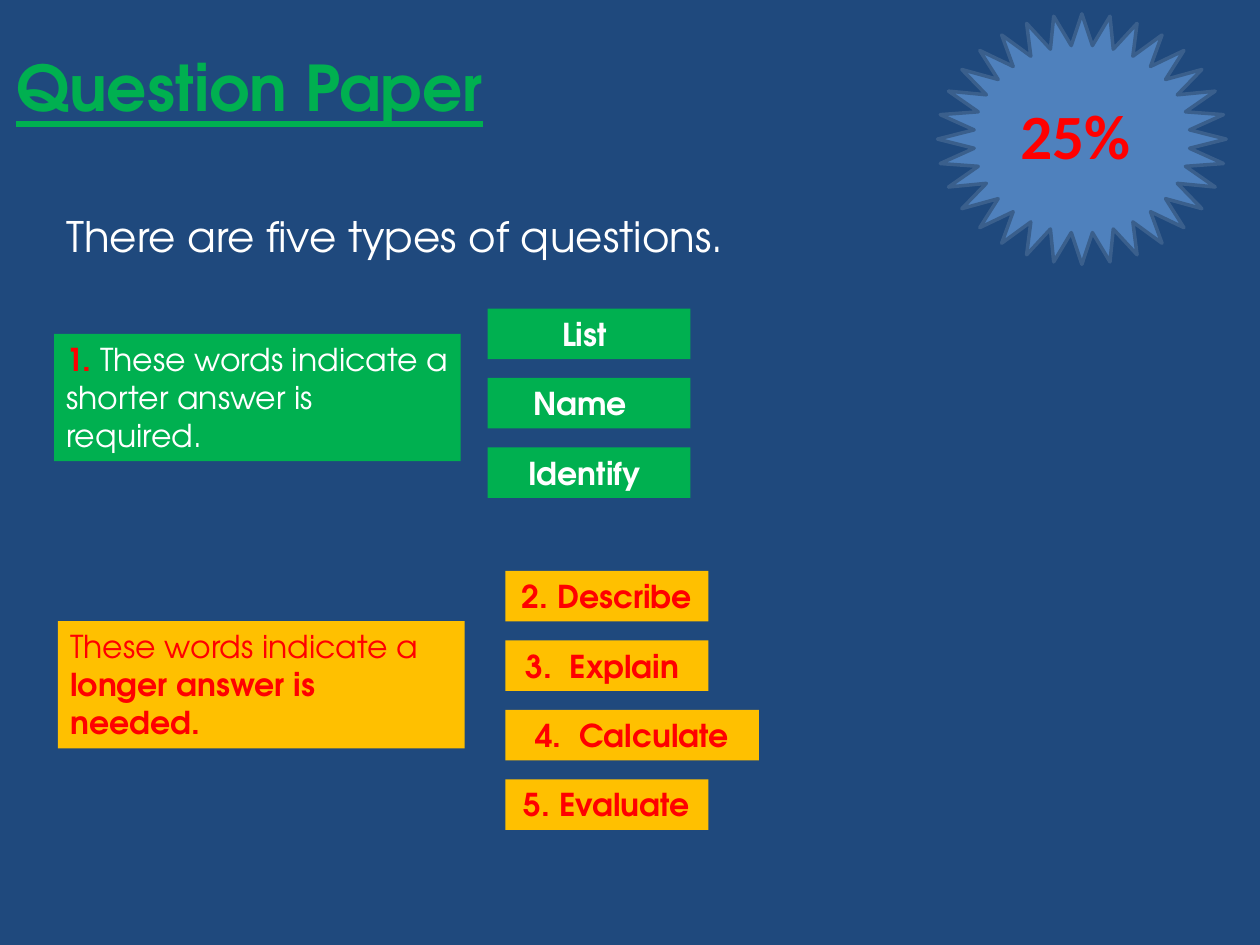
from pptx import Presentation
from pptx.dml.color import RGBColor as Rgb
from pptx.enum.shapes import MSO_SHAPE as Preset
from pptx.enum.text import MSO_AUTO_SIZE as AutoSize, PP_ALIGN as Align
from pptx.util import Cm, Pt

THEME = {
    "navy": "1F497D", "green": "00B050", "amber": "FFC000", "red": "FF0000",
    "white": "FFFFFF", "blue": "4F81BD", "outline": "3A5F8C",
    "font": "TeX Gyre Adventor", "badge_font": "Calibri",
    "title": 36, "lead": 24, "body": 18,
}

TITLE = "Question Paper"
SHARE = "25%"
LEAD = "There are five types of questions."

# Runs are (text, colour, bold); words are (text, width, inset that nudges it left).
GROUPS = [
    {
        "fill": "green", "ink": "white",
        "note": [("1. ", "red", True),
                 ("These words indicate a shorter answer is required.", "white", False)],
        "note_at": (1.09, 6.73), "words_at": (9.83, 6.22),
        "words": [("List", 4.09, 0.18), ("Name", 4.09, 0.36), ("Identify", 4.09, 0.18)],
    },
    {
        "fill": "amber", "ink": "red",
        "note": [("These words indicate a ", "red", False),
                 ("longer answer is needed.", "red", True)],
        "note_at": (1.17, 12.52), "words_at": (10.19, 11.51),
        "words": [("2. Describe", 4.09, 0), ("3.  Explain", 4.09, 0.18),
                  ("4.  Calculate", 5.11, 0), ("5. Evaluate", 4.09, 0)],
    },
]
NOTE_SIZE = (8.2, 2.57)
WORD_HEIGHT, WORD_STEP = 1.02, 1.4
INSET = 0.25


def colour(key):
    return Rgb.from_string(THEME[key])


def apply(target, values):
    for key, value in values.items():
        setattr(target, key, value)


def write(slide, box, runs, size="body", fill=None, align=Align.LEFT,
          nudge=0, font="font", underline=False):
    label = slide.shapes.add_textbox(*map(Cm, box))
    if fill:
        label.fill.solid()
        label.fill.fore_color.rgb = colour(fill)
    apply(label.text_frame, {
        "word_wrap": True,
        "auto_size": AutoSize.SHAPE_TO_FIT_TEXT,
        "margin_right": Cm(INSET + nudge),
    })
    paragraph = label.text_frame.paragraphs[0]
    paragraph.alignment = align
    for text, ink, bold in runs:
        run = paragraph.add_run()
        run.text = text
        apply(run.font, {"name": THEME[font], "size": Pt(THEME[size]),
                         "bold": bold, "underline": underline})
        run.font.color.rgb = colour(ink)


def draw_badge(slide):
    badge = slide.shapes.add_shape(Preset.STAR_32_POINT, Cm(18.9), Cm(0.28), Cm(5.82), Cm(5.05))
    badge.shadow.inherit = False
    badge.fill.solid()
    badge.fill.fore_color.rgb = colour("blue")
    badge.line.color.rgb = colour("outline")
    badge.line.width = Pt(2)
    write(slide, (20.32, 1.83, 3, 1.8), [(SHARE, "red", True)], "title", font="badge_font")


def draw_group(slide, group):
    write(slide, group["note_at"] + NOTE_SIZE, group["note"], fill=group["fill"])
    left, top = group["words_at"]
    for row, (word, width, nudge) in enumerate(group["words"]):
        write(slide, (left, top + row * WORD_STEP, width, WORD_HEIGHT),
              [(word, group["ink"], True)], fill=group["fill"],
              align=Align.CENTER, nudge=nudge)


def main():
    deck = Presentation()
    apply(deck, {"slide_width": Cm(25.4), "slide_height": Cm(19.05)})
    slide = deck.slides.add_slide(deck.slide_layouts[6])
    slide.background.fill.solid()
    slide.background.fill.fore_color.rgb = colour("navy")

    write(slide, (0.08, 0.86, 17, 1.8), [(TITLE, "green", True)], "title", underline=True)
    draw_badge(slide)
    write(slide, (1.09, 4.11, 16.4, 1.27), [(LEAD, "white", False)], "lead")
    for group in GROUPS:
        draw_group(slide, group)
    deck.save("out.pptx")


if __name__ == "__main__":
    main()
